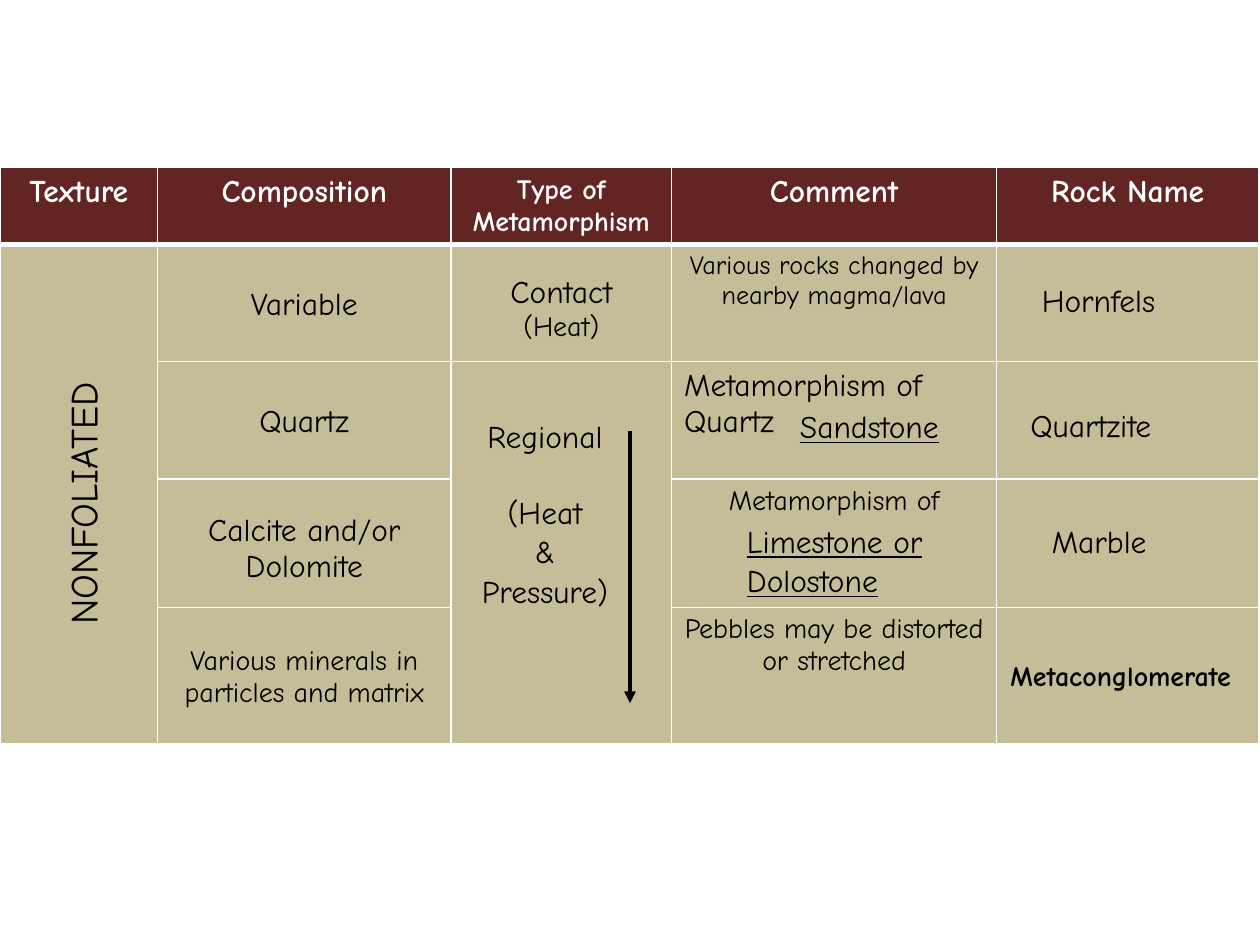
import lxml.etree
import pptx
import pptx.dml.color
import pptx.enum.shapes
import pptx.enum.text
import pptx.oxml.ns
import pptx.util

Inches = pptx.util.Inches
Pt = pptx.util.Pt
CENTER = pptx.enum.text.PP_ALIGN.CENTER
LEFT = pptx.enum.text.PP_ALIGN.LEFT
STRAIGHT = pptx.enum.shapes.MSO_CONNECTOR.STRAIGHT

COLUMN_WIDTHS = [1.25, 2.33, 1.75, 2.58, 2.08]
ROW_HEIGHTS = [0.55, 0.93, 0.93, 1.02, 1.08]
HEADINGS = [("Texture", 18), ("Composition", 18), ("Type of Metamorphism", 16),
            ("Comment", 18), ("Rock Name", 18)]
CELL_TEXTS = [
    (1, 1, "Variable", {"top": 0.34}),
    (1, 2, [("Contact", {}), ("(Heat)", {"size": 16})], {"top": 0.24}),
    (1, 3, "Various rocks changed by nearby magma/lava", {"size": 15}),
    (2, 1, "Quartz", {"top": 0.34}),
    (2, 3, "Metamorphism of Quartz", {"align": LEFT}),
    (3, 1, "Calcite and/or Dolomite", {"top": 0.27}),
    (3, 3, "Metamorphism of", {"size": 16}),
    (4, 1, "Various minerals in particles and matrix", {"size": 16, "top": 0.3}),
    (4, 3, "Pebbles may be distorted or stretched", {"size": 16}),
]
ROCK_NAMES = [
    ("Hornfels", (8.17, 2.17, 1.57, 0.5), {}),
    ("Quartzite", (8.08, 3.16, 1.77, 0.5), {}),
    ("Marble", (8.25, 4.08, 1.3, 0.5), {}),
    ("Metaconglomerate", (7.92, 5.17, 2.15, 0.37), {"size": 16, "bold": True}),
]


def color(value):
    return pptx.dml.color.RGBColor.from_string(value)


def write(frame, text, align=LEFT, spacing=None, **style):
    """Fill a frame with one line of text or a list of (line, format) pairs."""
    lines = [(text, {})] if isinstance(text, str) else text
    for index, (line, changes) in enumerate(lines):
        para = frame.paragraphs[0] if index == 0 else frame.add_paragraph()
        look = {**style, **changes}
        para.alignment = align
        if spacing:
            para.line_spacing = spacing
        if "before" in look:
            para.space_before = Pt(look["before"])
        span = para.add_run()
        span.text = line
        span.font.name = look["font"]
        span.font.size = Pt(look.get("size", 18))
        span.font.bold = look.get("bold", False)
        span.font.underline = look.get("underline", False)
        span.font.color.rgb = color(look["ink"])


class RockPage:
    font = "Comic Neue"
    ink = "000000"
    paper = "FFFFFF"
    header = "632523"
    body = "C4BD97"

    def __init__(self, page):
        self.page = page

    def table(self, left, top, widths, heights):
        frame = self.page.shapes.add_table(
            len(heights), len(widths), Inches(left), Inches(top),
            Inches(sum(widths)), Inches(sum(heights)))
        grid = frame.table
        for column, width in zip(grid.columns, widths):
            column.width = Inches(width)
        for index, height in enumerate(heights):
            grid.rows[index].height = Inches(height)
            for cell in grid.rows[index].cells:
                self.borders(cell, top=3 if index == 1 else 1, bottom=3 if index == 0 else 1)
                cell.fill.solid()
                cell.fill.fore_color.rgb = color(self.body if index else self.header)
        return grid

    def borders(self, cell, top, bottom):
        properties = cell._tc.get_or_add_tcPr()
        for side, width in (("L", 1), ("R", 1), ("T", top), ("B", bottom)):
            line = lxml.etree.SubElement(
                properties, pptx.oxml.ns.qn("a:ln" + side), w=str(Pt(width)))
            fill = lxml.etree.SubElement(line, pptx.oxml.ns.qn("a:solidFill"))
            lxml.etree.SubElement(fill, pptx.oxml.ns.qn("a:srgbClr"), val=self.paper)

    def cell(self, cell, text, top=0.05, align=CENTER, ink=ink, **style):
        cell.margin_top = Inches(top)
        write(cell.text_frame, text, align=align, font=self.font, ink=ink, **style)

    def label(self, text, place, rotation=0, **style):
        box = self.page.shapes.add_textbox(*[Inches(length) for length in place])
        box.rotation = rotation
        box.text_frame.word_wrap = True
        write(box.text_frame, text, spacing=1.04, font=self.font, ink=self.ink, **style)

    def arrow(self, x1, y1, x2, y2):
        arrow = self.page.shapes.add_connector(
            STRAIGHT, Inches(x1), Inches(y1), Inches(x2), Inches(y2))
        arrow.line.color.rgb = color(self.ink)
        arrow.line.width = Pt(2.25)
        line = arrow.line._get_or_add_ln()
        lxml.etree.SubElement(line, pptx.oxml.ns.qn("a:tailEnd"), type="triangle")
        lxml.etree.SubElement(arrow._element.spPr, pptx.oxml.ns.qn("a:effectLst"))


def main():
    deck = pptx.Presentation()
    deck.slide_width, deck.slide_height = Inches(10), Inches(7.5)
    rocks = RockPage(deck.slides.add_slide(deck.slide_layouts[6]))

    grid = rocks.table(0, 1.33, COLUMN_WIDTHS, ROW_HEIGHTS)
    grid.cell(1, 0).merge(grid.cell(4, 0))
    grid.cell(2, 2).merge(grid.cell(4, 2))
    for column, (heading, size) in enumerate(HEADINGS):
        rocks.cell(grid.cell(0, column), heading, size=size, bold=True, ink=rocks.paper)
    for row, column, text, style in CELL_TEXTS:
        rocks.cell(grid.cell(row, column), text, **style)

    rocks.label("NONFOLIATED", (-0.63, 3.76, 2.54, 0.47), rotation=270, align=CENTER, size=22)
    rocks.label([("Regional", {}), ("(Heat", {"before": 21}), ("&", {}), ("Pressure)", {})],
                (3.67, 3.25, 1.31, 1.6), align=CENTER)
    rocks.arrow(5, 3.42, 5, 5.58)
    rocks.label("Sandstone", (6.25, 3.17, 1.42, 0.4), underline=True)
    rocks.label([("Limestone or", {}), ("Dolostone", {})], (5.83, 4.08, 1.72, 0.71),
                underline=True)
    for name, place, style in ROCK_NAMES:
        rocks.label(name, place, **style)

    deck.save("out.pptx")


if __name__ == "__main__":
    main()
